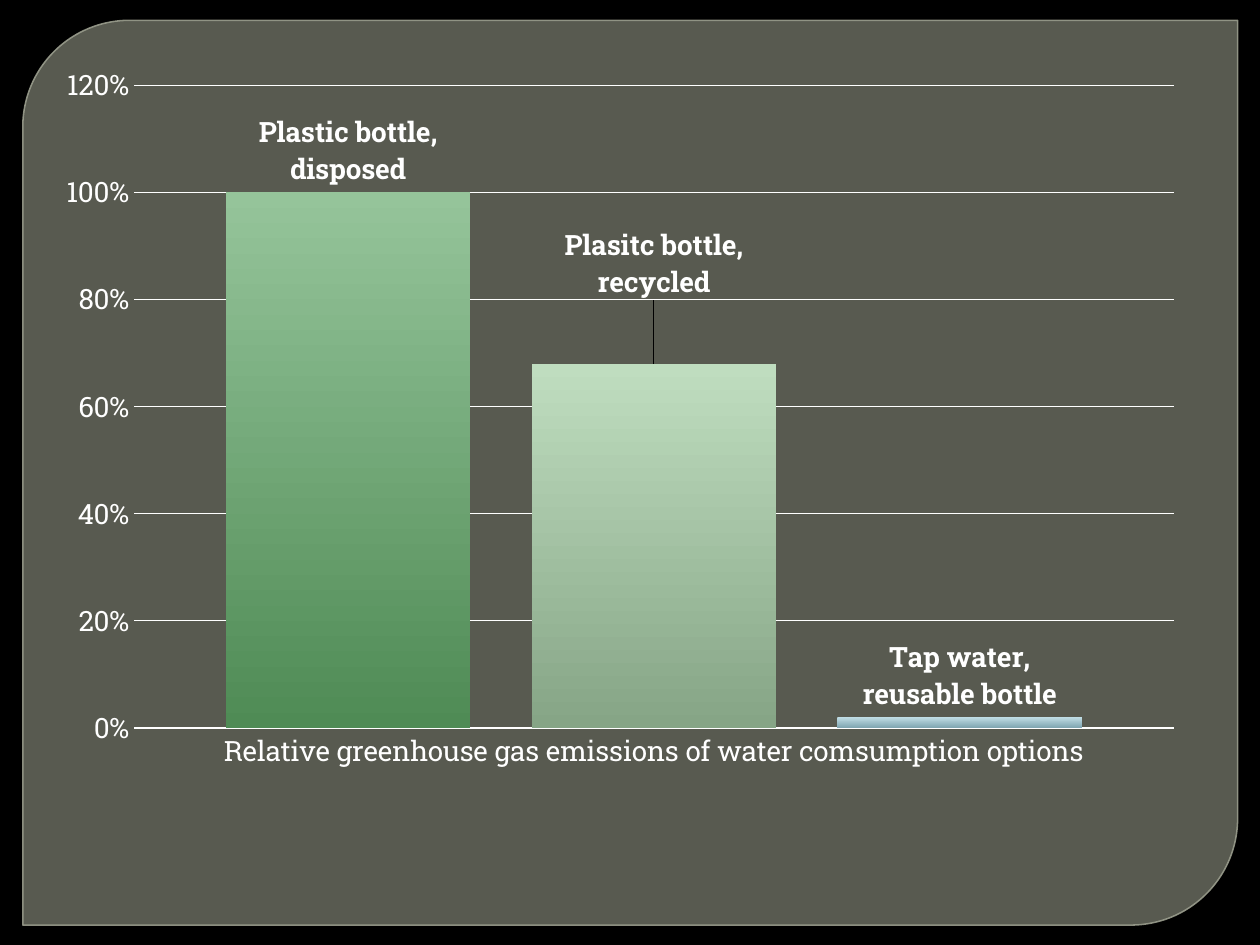
from dataclasses import dataclass

from lxml import etree
from pptx import Presentation
from pptx.chart.data import CategoryChartData
from pptx.dml.color import RGBColor
from pptx.enum.chart import XL_CHART_TYPE, XL_LABEL_POSITION, XL_TICK_MARK
from pptx.enum.shapes import MSO_SHAPE
from pptx.oxml.ns import qn
from pptx.util import Cm, Pt

COLUMNS = XL_CHART_TYPE.COLUMN_CLUSTERED
ABOVE_BAR = XL_LABEL_POSITION.OUTSIDE_END
NO_TICK = XL_TICK_MARK.NONE
FRAME_SHAPE = MSO_SHAPE.ROUND_2_DIAG_RECTANGLE
BLANK_LAYOUT = 6


@dataclass(frozen=True)
class Theme:
    background: str = "000000"
    frame: str = "888B7B"
    frame_edge: str = "9DA090"
    text: str = "FFFFFF"
    font: str = "Roboto Slab"
    size: int = 16
    hairline: float = 0.75


@dataclass(frozen=True)
class Option:
    """One way of drinking water, with its emissions relative to the worst."""
    name: str
    emissions: float
    top: str
    bottom: str
    label: str = ""
    label_shift: float = 0


THEME = Theme()
CATEGORY = "Relative greenhouse gas emissions of water comsumption options"
OPTIONS = [
    Option("Plastic bottle, disposed", 1, "95C49A", "4F8B55",
           label="Plastic bottle, disposed"),
    Option("Plasitc bottle, recycled", 0.68, "BFDDBF", "86A586",
           label_shift=-0.08),
    Option("Tap water in reusable bottle", 0.02, "C0DDE5", "7FA5B0",
           label="Tap water, reusable bottle"),
]
PLOT_LAYOUT = {"layoutTarget": "inner", "xMode": "edge", "yMode": "edge",
               "x": 0.08, "y": 0.044, "w": 0.9, "h": 0.878}


def rgb(value):
    return RGBColor.from_string(value)


def assign(target, values):
    for name, value in values.items():
        setattr(target, name, value)


def style_font(font, bold=False):
    assign(font, {"name": THEME.font, "size": Pt(THEME.size), "bold": bold})
    font.color.rgb = rgb(THEME.text)


def style_line(line, color, width):
    line.fill.solid()
    line.color.rgb = rgb(color)
    line.width = Pt(width)


def set_opacity(fill_parent, percent):
    color = fill_parent.find(f"{qn('a:solidFill')}/{qn('a:srgbClr')}")
    etree.SubElement(color, qn("a:alpha"), val=str(percent * 1000))


def manual_layout(values):
    layout = etree.Element(qn("c:layout"))
    manual = etree.SubElement(layout, qn("c:manualLayout"))
    for tag, value in values.items():
        etree.SubElement(manual, qn(f"c:{tag}"), val=str(value))
    return layout


def add_frame(slide):
    frame = slide.shapes.add_shape(
        FRAME_SHAPE, Cm(0.46), Cm(0.41), Cm(24.49), Cm(18.24))
    frame.shadow.inherit = False
    frame.adjustments[0] = 0.118
    frame.adjustments[1] = 0
    frame.fill.solid()
    frame.fill.fore_color.rgb = rgb(THEME.frame)
    style_line(frame.line, THEME.frame_edge, 0.87)
    properties = frame.element.spPr
    set_opacity(properties, 65)
    set_opacity(properties.find(qn("a:ln")), 88)


def style_bar(series, option):
    fill = series.format.fill
    fill.gradient()
    fill.gradient_angle = 270
    for stop, color in zip(fill.gradient_stops, (option.top, option.bottom)):
        stop.color.rgb = rgb(color)


def label_bar(series, option):
    """Name the bar above its top, moved by a share of the chart height."""
    assign(series.data_labels, {"show_series_name": True, "show_value": False,
                                "position": ABOVE_BAR})
    label = series.points[0].data_label
    if option.label:
        label.text_frame.text = option.label
        style_font(label.text_frame.paragraphs[0].runs[0].font, bold=True)
    else:
        style_font(label.font, bold=True)
    label.position = ABOVE_BAR
    element = series.data_labels._element.find(qn("c:dLbl"))
    element.find(qn("c:showSerName")).set("val", "1")
    element.find(qn("c:showVal")).set("val", "0")
    if option.label_shift:
        element.insert(1, manual_layout({"x": 0, "y": option.label_shift}))


def style_axes(chart):
    ticks = {"major_tick_mark": NO_TICK, "minor_tick_mark": NO_TICK}
    assign(chart.category_axis, ticks)
    assign(chart.value_axis, {
        **ticks, "minimum_scale": 0, "maximum_scale": 1.2, "major_unit": 0.2,
        "has_major_gridlines": True})
    assign(chart.value_axis.tick_labels,
           {"number_format": "0%", "number_format_is_linked": False})
    chart.value_axis.format.line.fill.background()
    for line in (chart.category_axis.format.line,
                 chart.value_axis.major_gridlines.format.line):
        style_line(line, THEME.text, THEME.hairline)


def add_emissions_chart(slide):
    emissions = CategoryChartData(number_format="0%")
    emissions.categories = [CATEGORY]
    for option in OPTIONS:
        emissions.add_series(option.name, [option.emissions])
    chart = slide.shapes.add_chart(
        COLUMNS, Cm(0.84), Cm(1.07), Cm(23.29), Cm(14.76), emissions).chart
    assign(chart, {"has_title": False, "has_legend": False})
    style_font(chart.font)
    style_axes(chart)

    plot = chart.plots[0]
    assign(plot, {"gap_width": 75, "overlap": -25, "vary_by_categories": False})
    for series, option in zip(plot.series, OPTIONS):
        style_bar(series, option)
        label_bar(series, option)

    plot_area = chart.element.find(f".//{qn('c:plotArea')}")
    for automatic in plot_area.findall(qn("c:layout")):
        plot_area.remove(automatic)
    plot_area.insert(0, manual_layout(PLOT_LAYOUT))


def main():
    deck = Presentation()
    assign(deck, {"slide_width": Cm(25.4), "slide_height": Cm(19.05)})
    slide = deck.slides.add_slide(deck.slide_layouts[BLANK_LAYOUT])
    slide.background.fill.solid()
    slide.background.fill.fore_color.rgb = rgb(THEME.background)
    add_frame(slide)
    add_emissions_chart(slide)
    deck.save("out.pptx")


if __name__ == "__main__":
    main()
